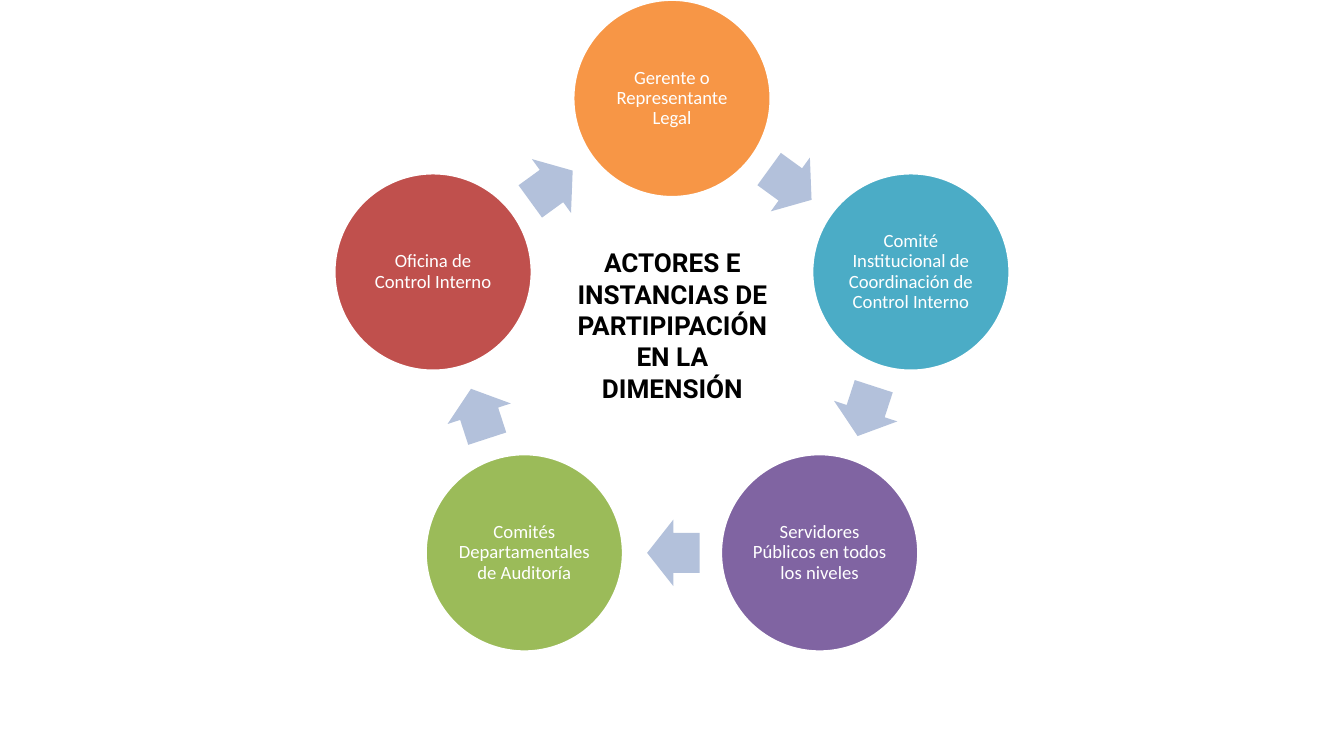
from math import cos, pi, sin

from pptx import Presentation
from pptx.dml.color import RGBColor
from pptx.enum.shapes import MSO_SHAPE
from pptx.enum.text import MSO_ANCHOR, MSO_AUTO_SIZE, PP_ALIGN
from pptx.util import Inches, Pt

OVAL = MSO_SHAPE.OVAL
RIGHT_ARROW = MSO_SHAPE.RIGHT_ARROW
MIDDLE, TOP = MSO_ANCHOR.MIDDLE, MSO_ANCHOR.TOP
CENTER = PP_ALIGN.CENTER
NO_AUTOFIT = MSO_AUTO_SIZE.NONE
TITLE_ONLY = 5

COLORS = {
    "orange": "F79646",
    "teal": "4BACC6",
    "purple": "8064A2",
    "green": "9BBB59",
    "red": "C0504D",
    "arrow": "B3C1DB",
    "white": "FFFFFF",
    "black": "000000",
}
ACTORS = [
    ("Gerente o Representante Legal", "orange"),
    ("Comité Institucional de Coordinación de Control Interno", "teal"),
    ("Servidores Públicos en todos los niveles", "purple"),
    ("Comités Departamentales de Auditoría", "green"),
    ("Oficina de Control Interno", "red"),
]
TITLE = "ACTORES E INSTANCIAS DE PARTIPIPACIÓN EN LA DIMENSIÓN"
DIAMETER = 2.93
ARROW_WIDTH, ARROW_HEIGHT = 0.78, 0.99
ARROW_SETBACK = 0.02


def rgb(name):
    """Return the named colour."""
    return RGBColor.from_string(COLORS[name])


def write_text(shape, text, font_name, size, color, bold=False):
    """Write one centred, wrapped paragraph in a shape."""
    frame = shape.text_frame
    frame.text = text
    frame.word_wrap = True
    frame.auto_size = NO_AUTOFIT
    paragraph = frame.paragraphs[0]
    paragraph.alignment = CENTER
    font = paragraph.runs[0].font
    font.name, font.size, font.bold = font_name, Pt(size), bold
    font.color.rgb = rgb(color)


def add_centered_shape(slide, kind, center_x, center_y, width, height, color):
    """Add a filled preset shape around a centre point."""
    shape = slide.shapes.add_shape(
        kind, Inches(center_x - width / 2), Inches(center_y - height / 2),
        Inches(width), Inches(height))
    shape.shadow.inherit = False
    shape.fill.solid()
    shape.fill.fore_color.rgb = rgb(color)
    return shape


def add_actor(slide, center_x, center_y, text, color):
    """Add one actor circle with its label."""
    circle = add_centered_shape(
        slide, OVAL, center_x, center_y, DIAMETER, DIAMETER, color)
    circle.line.color.rgb = rgb("white")
    circle.line.width = Pt(2)
    write_text(circle, text, "Calibri", 20, "white")
    frame = circle.text_frame
    frame.vertical_anchor = MIDDLE
    frame.margin_left = frame.margin_right = Inches(0.03)
    frame.margin_top = frame.margin_bottom = Inches(0.03)
    frame.paragraphs[0].line_spacing = 0.9


def add_arrow(slide, start, end, rotation):
    """Add the arrow midway between two circle centres."""
    angle = rotation * pi / 180
    center_x = (start[0] + end[0]) / 2 - ARROW_SETBACK * cos(angle)
    center_y = (start[1] + end[1]) / 2 - ARROW_SETBACK * sin(angle)
    arrow = add_centered_shape(
        slide, RIGHT_ARROW, center_x, center_y,
        ARROW_WIDTH, ARROW_HEIGHT, "arrow")
    arrow.line.fill.background()
    arrow.adjustments[0], arrow.adjustments[1] = 0.6, 0.5
    arrow.rotation = rotation


def add_cycle(slide, left, top, width):
    """Place the actors clockwise on a ring, joined by arrows."""
    count = len(ACTORS)
    step = 360 / count
    radius = (width - DIAMETER) / 2 / sin(2 * pi / count)
    middle_x = left + width / 2
    middle_y = top + DIAMETER / 2 + radius
    angles = [2 * pi * index / count for index in range(count)]
    centers = [(middle_x + radius * sin(angle), middle_y - radius * cos(angle))
               for angle in angles]
    for index, (text, color) in enumerate(ACTORS):
        add_actor(slide, *centers[index], text, color)
        add_arrow(slide, centers[index], centers[(index + 1) % count],
                  step * (index + 0.5))


def place_title(slide, left, top, width, height):
    """Move and format the title at the heart of the cycle."""
    title = slide.shapes.title
    title.left, title.top = Inches(left), Inches(top)
    title.width, title.height = Inches(width), Inches(height)
    write_text(title, TITLE, "Roboto", 28, "black", bold=True)
    title.text_frame.vertical_anchor = TOP


def main():
    """Build and save the slide."""
    presentation = Presentation()
    presentation.slide_width = Inches(20)
    presentation.slide_height = Inches(11.25)
    slide = presentation.slides.add_slide(
        presentation.slide_layouts[TITLE_ONLY])
    add_cycle(slide, 4.98, 0, 10.04)
    place_title(slide, 8.42, 3.62, 3.17, 2.46)
    presentation.save("out.pptx")


if __name__ == "__main__":
    main()
